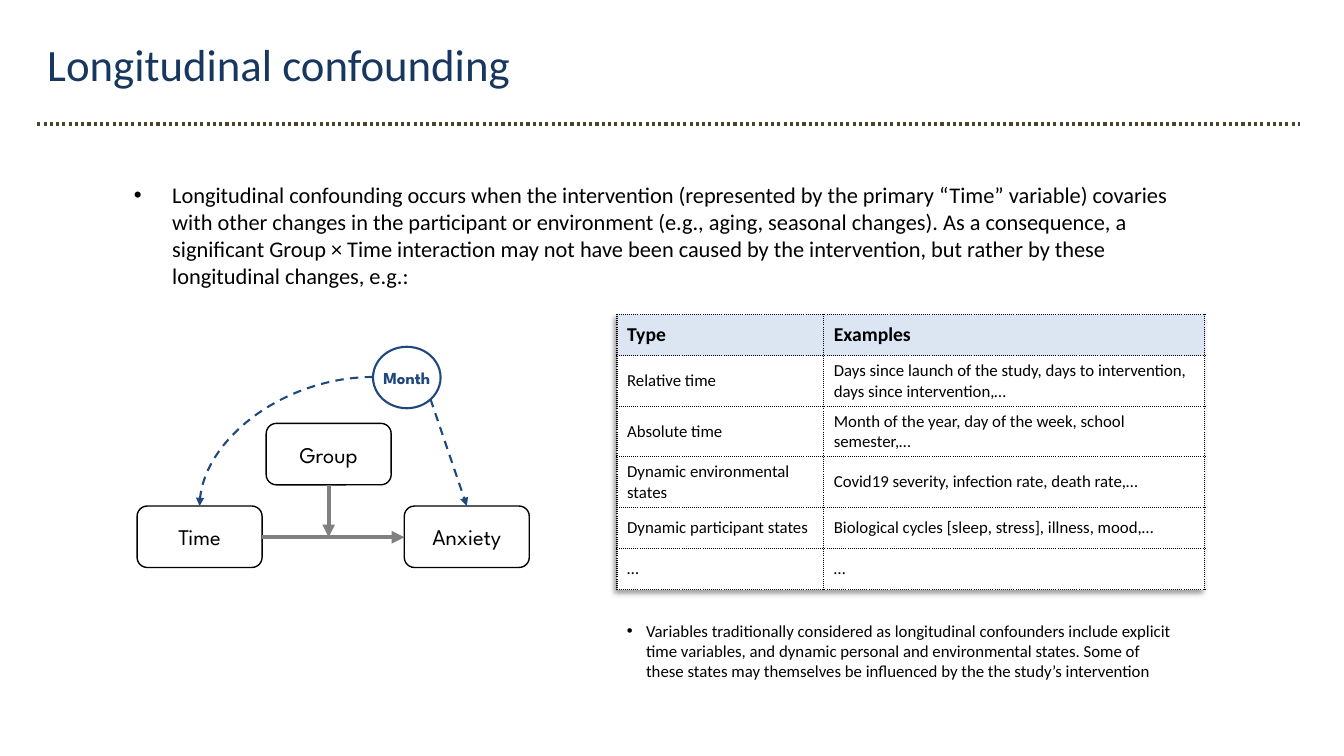
from lxml import etree
from pptx import Presentation
from pptx.dml.color import RGBColor
from pptx.enum.dml import MSO_LINE_DASH_STYLE as Dash
from pptx.enum.shapes import MSO_CONNECTOR as Link, MSO_SHAPE as Preset
from pptx.enum.text import MSO_ANCHOR as Anchor, PP_ALIGN as Align
from pptx.oxml import parse_xml
from pptx.oxml.ns import nsdecls, qn
from pptx.util import Pt

SCALE = 9144
COLORS = {
    "ink": "000000", "paper": "FFFFFF", "title": "17375E", "rule": "4A452A",
    "arrow": "808080", "month": "1F497D", "header": "DCE6F2",
}
BODY_FONT, DIAGRAM_FONT = "Calibri", "League Spartan"

TEXTS = [
    ("Longitudinal confounding", (37, 32, 1165, 64), 32, "title", 0),
    ("Longitudinal confounding occurs when the intervention (represented by the primary “Time” variable) "
     "covaries with other changes in the participant or environment (e.g., aging, seasonal changes). "
     "As a consequence, a significant Group × Time interaction may not have been caused by the intervention, "
     "but rather by these longitudinal changes, e.g.:", (123, 175, 1071, 539), 16, "ink", 38),
    ("Variables traditionally considered as longitudinal confounders include explicit time variables, "
     "and dynamic personal and environmental states. Some of these states may themselves be influenced "
     "by the the study’s intervention", (612, 611, 567, 71), 12, "ink", 19),
]
ROWS = [
    ("Type", "Examples"),
    ("Relative time", "Days since launch of the study, days to intervention, days since intervention,…"),
    ("Absolute time", "Month of the year, day of the week, school semester,…"),
    ("Dynamic environmental states", "Covid19 severity, infection rate, death rate,…"),
    ("Dynamic participant states", "Biological cycles [sleep, stress], illness, mood,…"),
    ("…", "…"),
]
TABLE_LEFT, TABLE_TOP, ROW_HEIGHT, COLUMNS = 612, 312, 41, (205, 378)

NODE_WIDTH, NODE_HEIGHT = 124, 61
NODES = [("Time", 136, 502), ("Anxiety", 401, 502), ("Group", 264, 420)]
MONTH = (370, 344, 67, 61)
LINES = [
    ((37, 123, 1289, 123), "rule", 2.25, Dash.ROUND_DOT, False, False),
    ((260, 533, 401, 533), "arrow", 3, None, True, False),
    ((326, 481, 326, 533), "arrow", 3, None, True, False),
    ((370, 374, 198, 502), "month", 1.5, Dash.DASH, True, True),
    ((427, 396, 463, 502), "month", 1.5, Dash.DASH, True, False),
]


def emu(values):
    return [value * SCALE for value in values]


def color(name):
    return RGBColor.from_string(COLORS[name])


def write(frame, text, size, ink, font=BODY_FONT, bold=False, **settings):
    for name, value in {"word_wrap": True, **settings}.items():
        setattr(frame, name, value)
    para = frame.paragraphs[0]
    span = para.add_run()
    span.text = text
    for name, value in {"name": font, "size": Pt(size), "bold": bold}.items():
        setattr(span.font, name, value)
    span.font.color.rgb = color(ink)
    return para


def add_bullet(para, indent):
    props = para._p.get_or_add_pPr()
    props.set("marL", str(indent * SCALE))
    props.set("indent", str(-indent * SCALE))
    etree.SubElement(props, qn("a:buFont")).set("typeface", "Arial")
    etree.SubElement(props, qn("a:buChar")).set("char", "•")


def add_node(page, preset, place, text, size, ink, width, **settings):
    node = page.shapes.add_shape(preset, *emu(place))
    node.shadow.inherit = False
    node.fill.solid()
    node.fill.fore_color.rgb = color("paper")
    node.line.color.rgb = color(ink)
    node.line.width = Pt(width)
    para = write(node.text_frame, text, size, ink, DIAGRAM_FONT,
                 vertical_anchor=Anchor.MIDDLE, **settings)
    para.alignment = Align.CENTER


def add_line(page, ends, ink, width, dash, arrow, curved):
    link = page.shapes.add_connector(Link.CURVE if curved else Link.STRAIGHT, *emu(ends))
    link.line.color.rgb = color(ink)
    link.line.width = Pt(width)
    if dash:
        link.line.dash_style = dash
    props = link._element.spPr
    if curved:
        props.find(qn("a:prstGeom")).set("prst", "curvedConnector2")
    if arrow:
        etree.SubElement(props.find(qn("a:ln")), qn("a:tailEnd")).set("type", "triangle")
    etree.SubElement(props, qn("a:effectLst"))


def add_borders(cell):
    props = cell._tc.get_or_add_tcPr()
    for side in ("lnL", "lnR", "lnT", "lnB"):
        props.append(parse_xml(
            f'<a:{side} {nsdecls("a")} w="12700"><a:solidFill><a:srgbClr val="{COLORS["ink"]}"/>'
            f'</a:solidFill><a:prstDash val="sysDot"/></a:{side}>'))


def add_examples(page):
    place = (TABLE_LEFT, TABLE_TOP, sum(COLUMNS), ROW_HEIGHT * len(ROWS))
    table = page.shapes.add_table(len(ROWS), len(COLUMNS), *emu(place)).table
    table.horz_banding = False
    table._tbl.tblPr.insert(0, parse_xml(
        f'<a:effectLst {nsdecls("a")}><a:outerShdw blurRad="50800" dist="38100" dir="8100000" '
        f'algn="tr" rotWithShape="0"><a:srgbClr val="{COLORS["ink"]}"><a:alpha val="40000"/>'
        '</a:srgbClr></a:outerShdw></a:effectLst>'))
    for column, width in zip(table.columns, COLUMNS):
        column.width = width * SCALE
    for row, texts in enumerate(ROWS):
        header = row == 0
        for column, text in enumerate(texts):
            cell = table.cell(row, column)
            add_borders(cell)
            cell.fill.solid()
            cell.fill.fore_color.rgb = color("header" if header else "paper")
            cell.vertical_anchor = Anchor.MIDDLE
            write(cell.text_frame, text, 14 if header else 12, "ink", bold=header)


def main():
    deck = Presentation()
    deck.slide_width, deck.slide_height = emu((1333, 750))
    page = deck.slides.add_slide(deck.slide_layouts[6])
    for text, place, size, ink, indent in TEXTS:
        box = page.shapes.add_textbox(*emu(place))
        para = write(box.text_frame, text, size, ink)
        if indent:
            add_bullet(para, indent)
    for text, left, top in NODES:
        add_node(page, Preset.ROUNDED_RECTANGLE, (left, top, NODE_WIDTH, NODE_HEIGHT),
                 text, 16, "ink", 1)
    margins = {f"margin_{side}": 4 * SCALE for side in ("left", "top", "right", "bottom")}
    add_node(page, Preset.OVAL, MONTH, "Month", 12, "month", 1.5,
             bold=True, **{**margins, "word_wrap": False})
    for line in LINES:
        add_line(page, *line)
    add_examples(page)
    deck.save("out.pptx")


if __name__ == "__main__":
    main()
